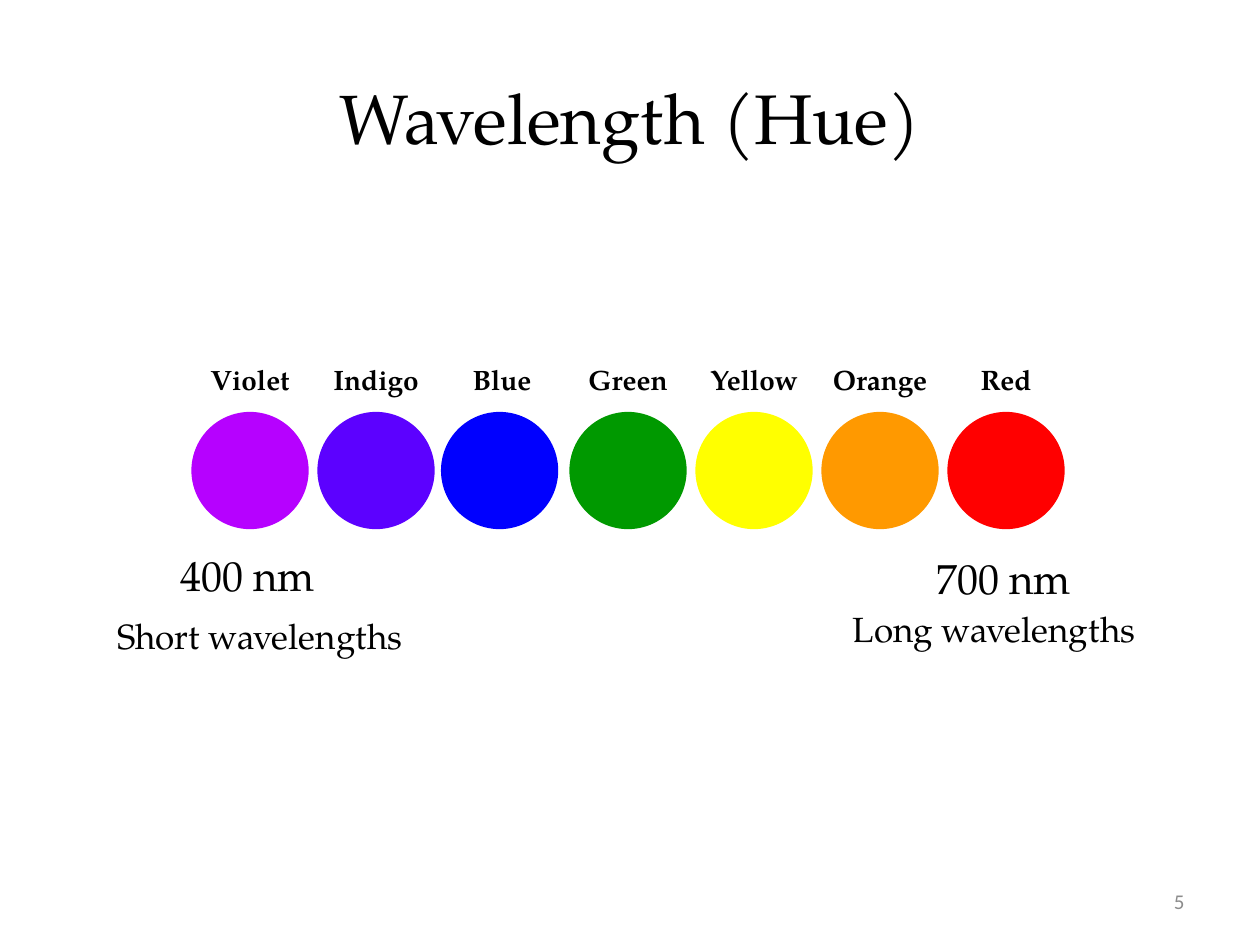
from pptx import Presentation
from pptx.dml.color import RGBColor
from pptx.enum.shapes import MSO_SHAPE
from pptx.enum.text import MSO_ANCHOR, PP_ALIGN
from pptx.util import Pt

SERIF = "TeX Gyre Pagella"
COLORS = {
    "text": "000000",
    "number": "8C8C8C",
    "Violet": "B601FF",
    "Indigo": "5C01FF",
    "Blue": "0000FF",
    "Green": "009900",
    "Yellow": "FFFF00",
    "Orange": "FF9900",
    "Red": "FF0000",
}
HUES = ["Violet", "Indigo", "Blue", "Green", "Yellow", "Orange", "Red"]
CIRCLE_SHIFTS = {"Blue": -1.4}
FIRST_CENTER = 142.9
PITCH = 72
DIAMETER = 67


def format_text(shape, text, size, color="text", font=SERIF, bold=False, align=PP_ALIGN.LEFT):
    shape.text_frame.text = text
    paragraph = shape.text_frame.paragraphs[0]
    paragraph.alignment = align
    run_font = paragraph.runs[0].font
    run_font.name = font
    run_font.size = Pt(size)
    run_font.bold = bold
    run_font.color.rgb = RGBColor.from_string(COLORS[color])


def add_title(slide, text):
    title = slide.shapes.title
    title.left, title.top, title.width, title.height = Pt(36), Pt(21.6), Pt(648), Pt(90)
    title.text_frame.vertical_anchor = MSO_ANCHOR.MIDDLE
    format_text(title, text, 40, align=PP_ALIGN.CENTER)


def add_text(slide, text, left, top, width, height, size, **formatting):
    box = slide.shapes.add_textbox(Pt(left), Pt(top), Pt(width), Pt(height))
    box.text_frame.word_wrap = False
    format_text(box, text, size, **formatting)
    return box


def add_hue(slide, name, center):
    left = center - DIAMETER / 2 + CIRCLE_SHIFTS.get(name, 0)
    circle = slide.shapes.add_shape(
        MSO_SHAPE.OVAL, Pt(left), Pt(235.4), Pt(DIAMETER), Pt(DIAMETER)
    )
    circle.shadow.inherit = False
    circle.fill.solid()
    circle.fill.fore_color.rgb = RGBColor.from_string(COLORS[name])
    circle.line.fill.background()
    label = add_text(
        slide, name, center - PITCH / 2, 203.6, PITCH, 26.6, 16,
        bold=True, align=PP_ALIGN.CENTER,
    )
    label.text_frame.word_wrap = True
    label.text_frame.margin_left = label.text_frame.margin_right = Pt(0)


def add_slide_number(slide, number):
    box = add_text(
        slide, number, 516, 500.4, 168, 28.8, 12,
        color="number", font="Calibri", align=PP_ALIGN.RIGHT,
    )
    box.text_frame.word_wrap = True
    box.text_frame.vertical_anchor = MSO_ANCHOR.MIDDLE


def main():
    presentation = Presentation()
    presentation.slide_width, presentation.slide_height = Pt(720), Pt(540)
    slide = presentation.slides.add_slide(presentation.slide_layouts[5])
    add_title(slide, "Wavelength (Hue)")
    for index, name in enumerate(HUES):
        add_hue(slide, name, FIRST_CENTER + index * PITCH)
    add_text(slide, "400 nm", 95.8, 310.3, 91.4, 36, 24)
    add_text(slide, "700 nm", 527.8, 312, 91.4, 36, 24)
    add_text(slide, "Short wavelengths", 59.8, 347.8, 179.3, 31, 20)
    add_text(slide, "Long wavelengths", 480.2, 343.4, 177.8, 31, 20)
    add_slide_number(slide, "5")
    presentation.save("out.pptx")


if __name__ == "__main__":
    main()
